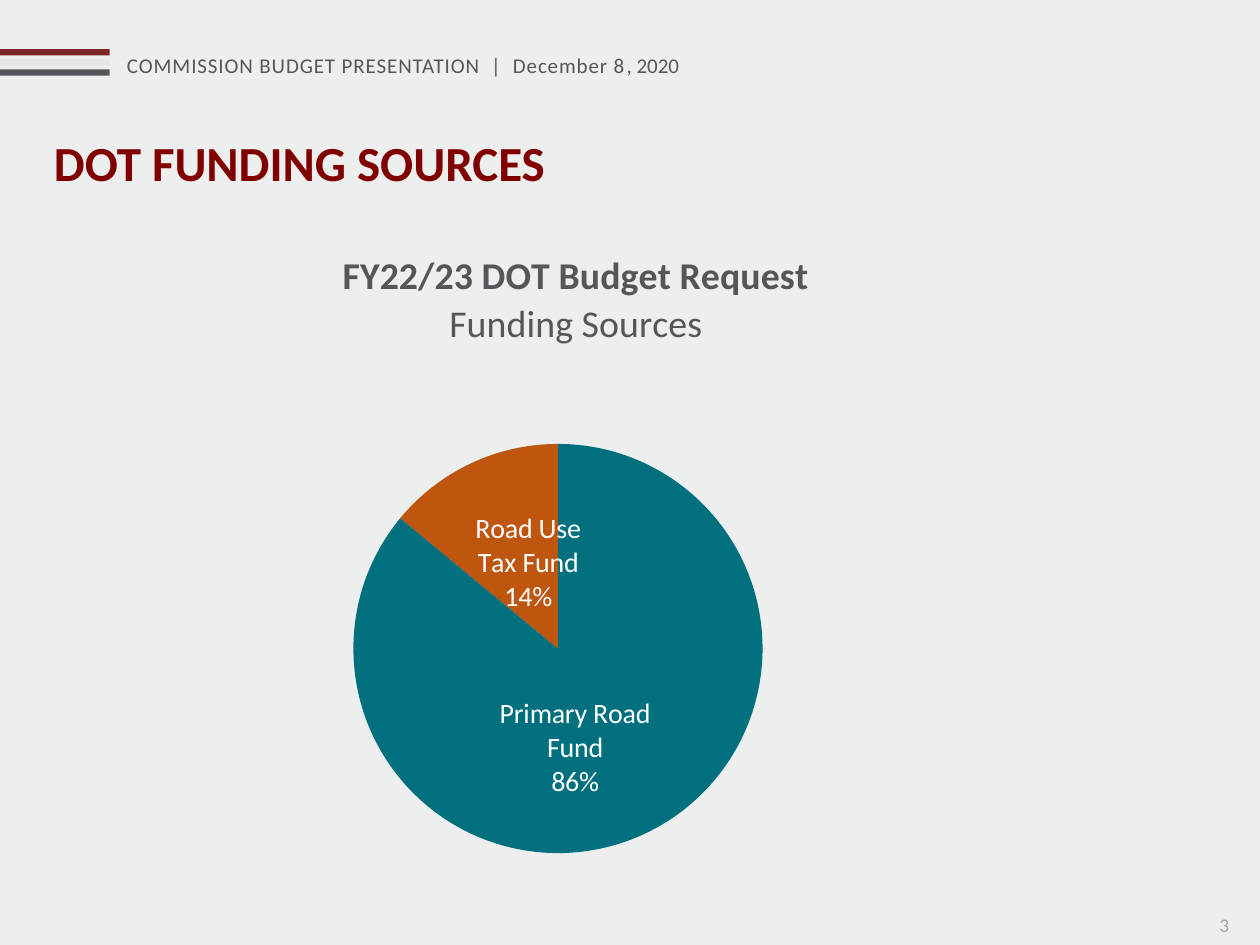
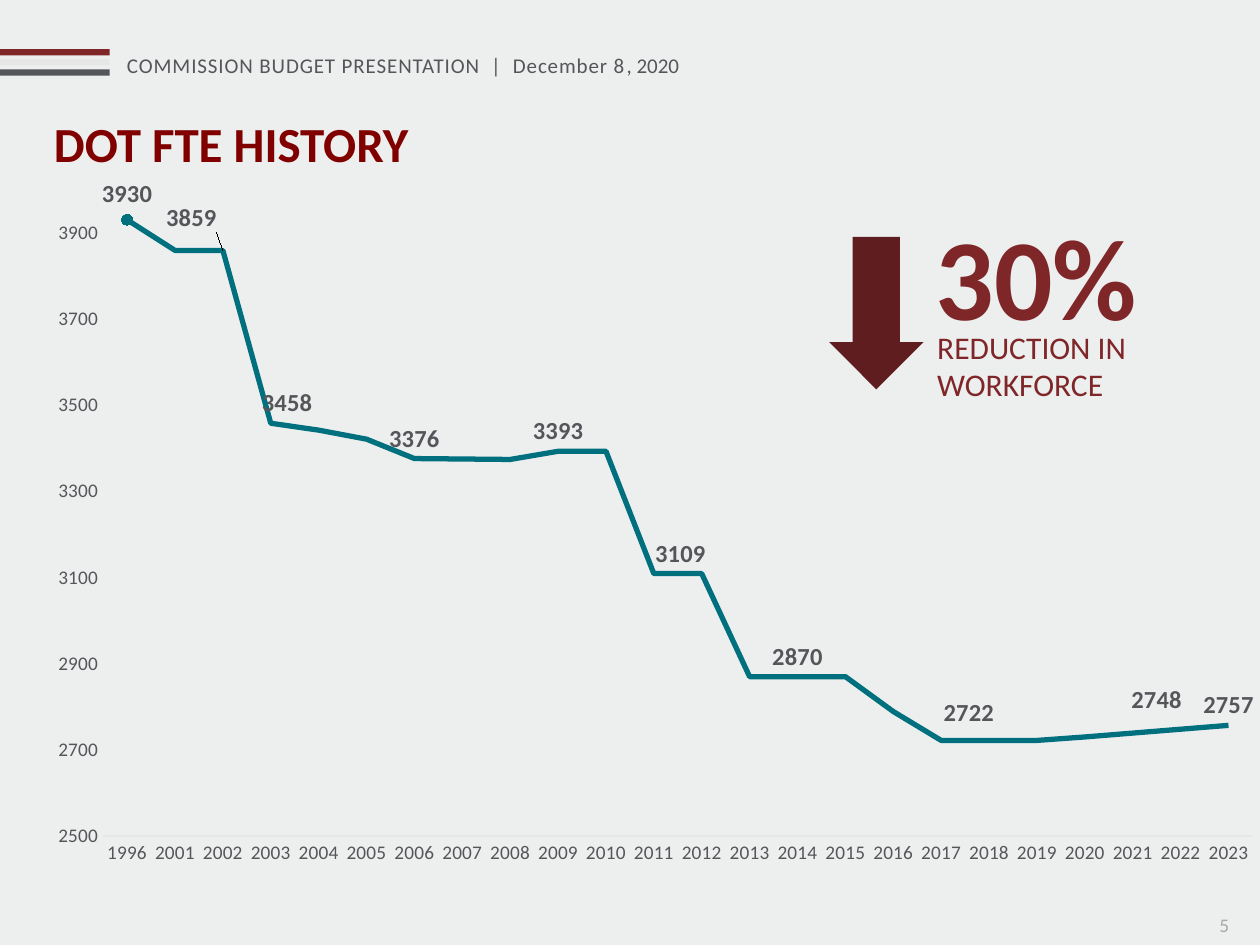
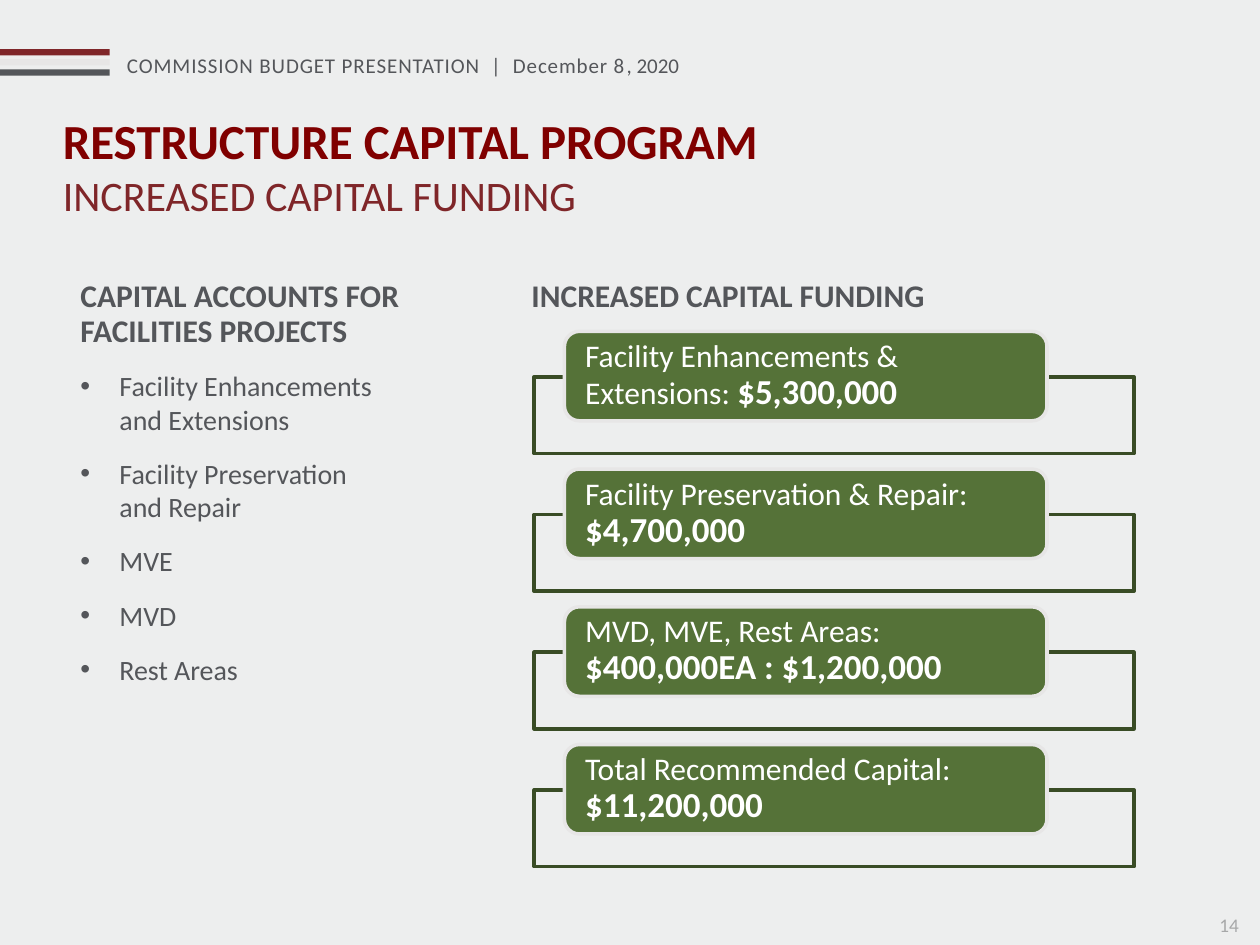
from lxml.etree import SubElement
from pptx import Presentation
from pptx.chart.data import CategoryChartData
from pptx.dml.color import RGBColor
from pptx.enum.chart import (XL_CHART_TYPE, XL_LABEL_POSITION, XL_MARKER_STYLE,
                             XL_TICK_MARK)
from pptx.enum.shapes import MSO_SHAPE
from pptx.enum.text import MSO_ANCHOR, PP_ALIGN
from pptx.oxml.ns import qn
from pptx.util import Inches, Pt

FONT = "Calibri"
PAPER = RGBColor(0xED, 0xEE, 0xEE)
MAROON = RGBColor(0x80, 0x00, 0x00)
BRICK = RGBColor(0x7F, 0x26, 0x29)
DARK_BRICK = RGBColor(0x5F, 0x1D, 0x1F)
SILVER = RGBColor(0xE7, 0xE6, 0xE6)
SLATE = RGBColor(0x54, 0x56, 0x5A)
GRAY = RGBColor(0xA7, 0xA8, 0xA9)
TEAL = RGBColor(0x00, 0x70, 0x7F)
ORANGE = RGBColor(0xBE, 0x56, 0x0F)
GREEN = RGBColor(0x55, 0x72, 0x38)
DARK_GREEN = RGBColor(0x39, 0x4C, 0x25)
WHITE = RGBColor(0xFF, 0xFF, 0xFF)

# The slide is a grid of 100 columns by 75 rows of square cells.
CELL = Inches(0.1)
COLUMNS, ROWS = 100, 75

TITLE = dict(size=Pt(28), bold=True, color=MAROON)
SUBTITLE = dict(size=Pt(24), color=BRICK)
HEADING = dict(size=Pt(18), bold=True, color=SLATE)
BULLET = dict(size=Pt(16), color=SLATE)
HEADER = dict(size=Pt(12), color=SLATE)
AXIS = dict(size=Pt(11), color=SLATE)

FUNDS = {
    "Primary Road Fund": (86, TEAL, "Primary Road Fund\n86%", (-2.1, 0.6)),
    "Road Use Tax Fund": (14, ORANGE, "Road Use\nTax Fund\n14%", (1.1, 0.6)),
}
FTE_YEARS = [1996, *range(2001, 2024)]
FTE_COUNTS = [3930, 3859, 3859, 3458, 3442, 3421, 3376, 3375, 3374, 3393, 3393, 3109,
              3109, 2870, 2870, 2870, 2789, 2722, 2722, 2722, 2730, 2739, 2748, 2757]
# Labelled points, each with its shift in cells from above the point.
FTE_LABEL_SHIFTS = {0: (0, 0), 2: (-2.5, -1), 3: (1.3, 0), 6: (0, 0), 9: (0, 0),
                    12: (-1.7, 0), 14: (0, 0), 17: (2.2, -0.6), 22: (-1.9, -0.7),
                    23: (0, 0)}
ACCOUNTS = ["Facility Enhancements\nand Extensions", "Facility Preservation\nand Repair",
            "MVE", "MVD", "Rest Areas"]
INCREASES = [
    ("Facility Enhancements & Extensions: ", "$5,300,000"),
    ("Facility Preservation & Repair: ", "$4,700,000"),
    ("MVD, MVE, Rest Areas:\n", "$400,000EA : $1,200,000"),
    ("Total Recommended Capital: ", "$11,200,000"),
]


def cells(*lengths):
    return [int(length * CELL) for length in lengths]


def style_font(font, color, **style):
    font.name = FONT
    font.color.rgb = color
    for key, value in style.items():
        setattr(font, key, value)


def write(paragraph, text, style, spacing=None):
    """Add styled text; a newline becomes a line break."""
    for number, line in enumerate(text.split("\n")):
        if number:
            paragraph.add_line_break()
        if line:
            run = paragraph.add_run()
            run.text = line
            style_font(run.font, **style)
            if spacing:
                run.font._element.set("spc", str(spacing))


def add_text(slide, box, *lines):
    """Add a text box with one paragraph per (text, style) pair."""
    frame = slide.shapes.add_textbox(*cells(*box)).text_frame
    frame.word_wrap = True
    for number, line in enumerate(lines):
        write(frame.add_paragraph() if number else frame.paragraphs[0], *line)
    return frame


def add_block(slide, preset, box, fill=None, line=None):
    block = slide.shapes.add_shape(preset, *cells(*box))
    block.shadow.inherit = False
    if fill is None:
        block.fill.background()
    else:
        block.fill.solid()
        block.fill.fore_color.rgb = fill
    if line is None:
        block.line.fill.background()
    else:
        block.line.color.rgb = line
        block.line.width = Pt(2)
    return block


def add_base_slide(deck, page):
    slide = deck.slides.add_slide(deck.slide_layouts[6])
    for stripe, color in enumerate((BRICK, SILVER, SLATE)):
        add_block(slide, MSO_SHAPE.RECTANGLE, (0, 3.9 + 0.8 * stripe, 8.7, 0.5), color)
    header = add_text(slide, (9.1, 3.7, 48.4, 3))
    write(header.paragraphs[0], "COMMISSION BUDGET PRESENTATION  |  December 8", HEADER, 50)
    write(header.paragraphs[0], ", 2020", HEADER)
    add_text(slide, (95.8, 72, 4.2, 3), (str(page), dict(size=Pt(11), color=GRAY)))
    return slide


def set_layout(parent, index, **settings):
    """Give a chart part a manual layout, as its child at the given index."""
    for old in parent.findall(qn("c:layout")):
        parent.remove(old)
    layout = SubElement(parent, qn("c:layout"))
    parent.insert(index, layout)
    manual = SubElement(layout, qn("c:manualLayout"))
    for key, value in settings.items():
        SubElement(manual, qn(f"c:{key}")).set("val", str(value))


def add_plain_chart(slide, kind, box, categories, values, plot):
    """Add a chart of one series; plot is its inner area in shares of the chart."""
    data = CategoryChartData()
    data.categories = categories
    data.add_series("Series 1", values)
    chart = slide.shapes.add_chart(kind, *cells(*box), data).chart
    chart.has_legend = chart.has_title = False
    style_font(chart.font, size=Pt(10), color=SLATE)
    chart.plots[0].vary_by_categories = False
    set_layout(chart.element.xpath(".//c:plotArea")[0], 0, layoutTarget="inner",
               xMode="edge", yMode="edge", **dict(zip("xywh", plot)))
    return chart


def shift_label(chart, point, shift, box):
    label = chart.element.xpath(f'.//c:dLbl[c:idx/@val="{point}"]')[0]
    if any(shift):
        set_layout(label, 1, x=shift[0] / box[2], y=shift[1] / box[3])


def add_funding_pie(slide):
    box = (3.7, 16.1, 89.2, 58)
    chart = add_plain_chart(slide, XL_CHART_TYPE.PIE, box, list(FUNDS),
                            [fund[0] for fund in FUNDS.values()], (0.27, 0.33, 0.37, 0.56))
    heading = chart.chart_title.text_frame
    title_style = dict(size=Pt(21.6), color=SLATE)
    write(heading.paragraphs[0], "FY22/23 DOT Budget Request", dict(title_style, bold=True))
    write(heading.add_paragraph(), "Funding Sources", dict(title_style, bold=False))
    set_layout(chart.element.xpath(".//c:title")[0], 1, xMode="edge", yMode="edge",
               x=0.26, y=0.06)
    series = chart.plots[0].series[0]
    series.data_labels.show_value = False
    for index, (_, color, text, shift) in enumerate(FUNDS.values()):
        point = series.points[index]
        point.format.fill.solid()
        point.format.fill.fore_color.rgb = color
        point.format.line.fill.background()
        frame = point.data_label.text_frame
        frame.text = text
        for paragraph in frame.paragraphs:
            paragraph.alignment = PP_ALIGN.CENTER
            style_font(paragraph.runs[0].font, size=Pt(16), bold=False, color=WHITE)
        point.data_label.position = XL_LABEL_POSITION.CENTER
        shift_label(chart, index, shift, box)


def style_axes(chart):
    years, counts = chart.category_axis, chart.value_axis
    for axis in (years, counts):
        axis.has_major_gridlines = False
        axis.major_tick_mark = axis.minor_tick_mark = XL_TICK_MARK.NONE
        style_font(axis.tick_labels.font, **AXIS)
    years.format.line.color.rgb = SILVER
    years.format.line.width = Pt(0.75)
    counts.format.line.fill.background()
    scale = dict(minimum_scale=2500, maximum_scale=4000, major_unit=200)
    for key, value in scale.items():
        setattr(counts, key, value)


def add_fte_line(slide):
    box = (1.7, 13.3, 98.3, 56.7)
    chart = add_plain_chart(slide, XL_CHART_TYPE.LINE, box, [str(year) for year in FTE_YEARS],
                            FTE_COUNTS, (0.066, 0.031, 0.928, 0.905))
    style_axes(chart)
    series = chart.plots[0].series[0]
    series.smooth = False
    series.format.line.color.rgb = TEAL
    series.format.line.width = Pt(3)
    series.marker.style = XL_MARKER_STYLE.NONE
    series.data_labels.show_value = False
    start = series.points[0].marker
    start.style = XL_MARKER_STYLE.CIRCLE
    start.size = 6
    start.format.fill.solid()
    start.format.fill.fore_color.rgb = TEAL
    start.format.line.color.rgb = TEAL
    for index, shift in FTE_LABEL_SHIFTS.items():
        label = series.points[index].data_label
        style_font(label.font, size=Pt(14), bold=True, color=SLATE)
        label.position = XL_LABEL_POSITION.ABOVE
        shift_label(chart, index, shift, box)


def add_reduction(slide):
    add_block(slide, MSO_SHAPE.DOWN_ARROW, (65.8, 18.8, 7.5, 12.1), DARK_BRICK)
    add_text(slide, (73.3, 15.8, 19.2, 12.1), ("30%", dict(size=Pt(66), bold=True, color=BRICK)))
    add_text(slide, (73.4, 25.5, 25, 7.1),
             ("REDUCTION IN WORKFORCE", dict(size=Pt(18), color=BRICK)))


def add_bullet(paragraph):
    properties = paragraph._p.get_or_add_pPr()
    indent = Inches(0.31)
    properties.set("marL", str(indent))
    properties.set("indent", str(-indent))
    SubElement(properties, qn("a:buFont")).set("typeface", "Arial")
    SubElement(properties, qn("a:buChar")).set("char", "•")


def add_column(slide, box, heading, items=()):
    """Add a heading with bulleted items under it."""
    frame = add_text(slide, box, (heading, HEADING), *((item, BULLET) for item in items))
    for number, paragraph in enumerate(frame.paragraphs):
        if number:
            add_bullet(paragraph)
        paragraph.line_spacing = Pt(19 if number else 20)
        paragraph.space_after = Pt(12)


def add_increase(slide, row, name, amount):
    top = 26.3 + 10.93 * row
    add_block(slide, MSO_SHAPE.RECTANGLE, (42.4, top + 3.6, 47.6, 6.1), line=DARK_GREEN)
    card = add_block(slide, MSO_SHAPE.ROUNDED_RECTANGLE, (44.8, top, 38.3, 7.1), GREEN, SILVER)
    frame = card.text_frame
    settings = dict(word_wrap=True, vertical_anchor=MSO_ANCHOR.MIDDLE, margin_top=0,
                    margin_bottom=0, margin_left=Inches(0.13), margin_right=Inches(0.13))
    for key, value in settings.items():
        setattr(frame, key, value)
    paragraph = frame.paragraphs[0]
    paragraph.alignment = PP_ALIGN.LEFT
    paragraph.line_spacing = 0.9
    write(paragraph, name, dict(size=Pt(18), color=WHITE))
    write(paragraph, amount, dict(size=Pt(20), bold=True, color=WHITE))


def main():
    deck = Presentation()
    deck.slide_width, deck.slide_height = cells(COLUMNS, ROWS)
    paper = deck.slide_master.background.fill
    paper.solid()
    paper.fore_color.rgb = PAPER

    funding = add_base_slide(deck, 3)
    add_text(funding, (3.3, 10, 58.7, 9.2), ("DOT FUNDING SOURCES", TITLE))
    add_funding_pie(funding)

    history = add_base_slide(deck, 5)
    add_text(history, (3.3, 8.5, 73.3, 4.9), ("DOT FTE HISTORY", TITLE))
    add_reduction(history)
    add_fte_line(history)

    capital = add_base_slide(deck, 14)
    add_text(capital, (4, 8.3, 86.8, 9),
             ("RESTRUCTURE CAPITAL PROGRAM", TITLE), ("INCREASED CAPITAL FUNDING", SUBTITLE))
    add_column(capital, (5.4, 21.6, 30.4, 34.6),
               "CAPITAL ACCOUNTS FOR\nFACILITIES PROJECTS", ACCOUNTS)
    add_column(capital, (41.2, 21.6, 50, 3.8), "INCREASED CAPITAL FUNDING")
    for row, increase in enumerate(INCREASES):
        add_increase(capital, row, *increase)

    deck.save("out.pptx")


if __name__ == "__main__":
    main()
